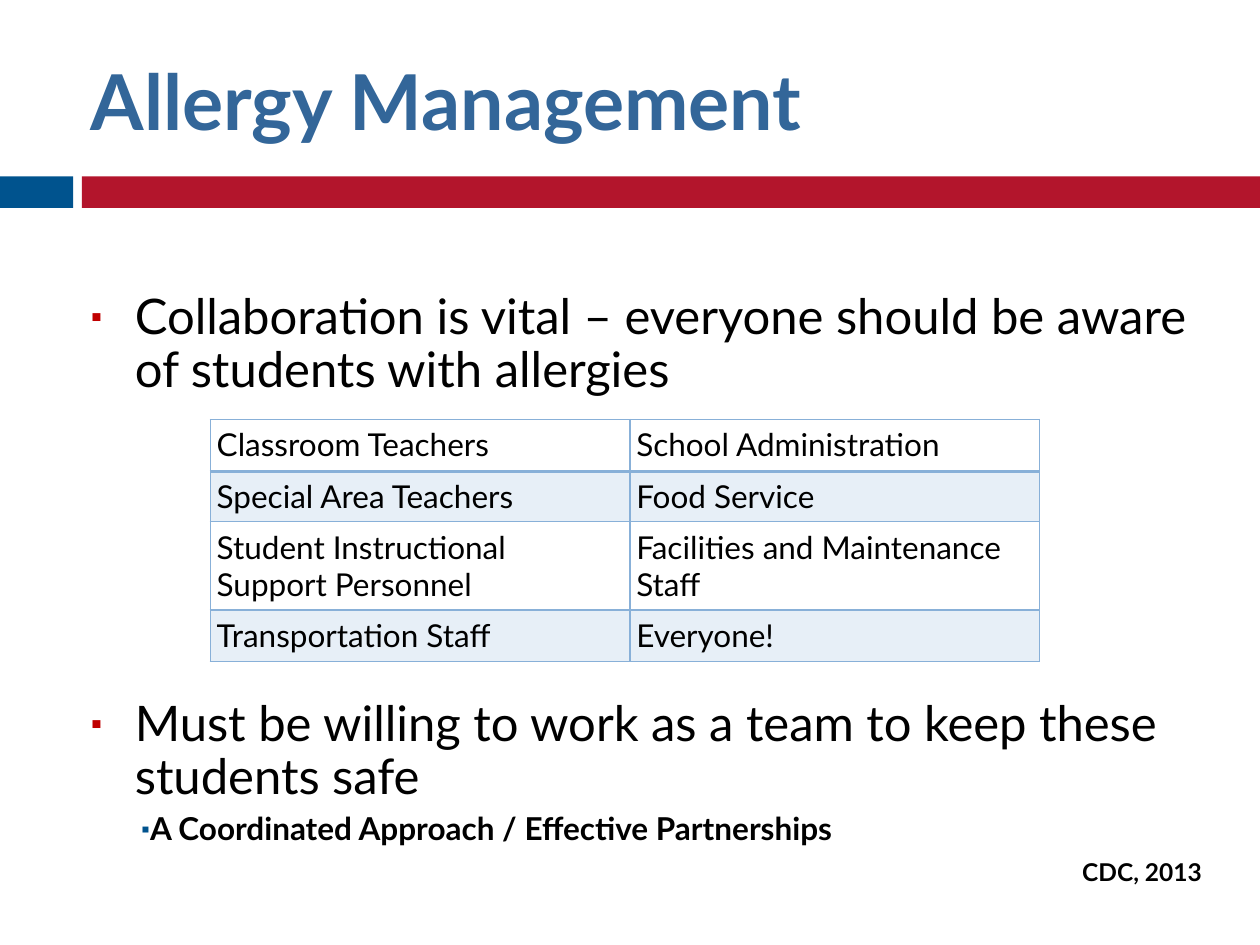
from dataclasses import dataclass

from lxml.etree import SubElement
from pptx import Presentation
from pptx.dml.color import RGBColor
from pptx.enum.shapes import MSO_SHAPE
from pptx.enum.text import MSO_ANCHOR, PP_ALIGN
from pptx.oxml.ns import qn
from pptx.util import Inches, Pt


@dataclass(frozen=True)
class Theme:
    font: str = "Lato"
    title: str = "336699"
    text: str = "000000"
    blue: str = "00538E"
    red: str = "B3152C"
    bullet: str = "C00000"
    grid: str = "88B0D8"
    title_size: int = 44
    body_size: int = 28
    small_size: int = 18
    source_size: int = 14


THEME = Theme()
INSET = Inches(0.05)
STAFF = [
    ["Classroom Teachers", "School Administration"],
    ["Special Area Teachers", "Food Service"],
    ["Student Instructional Support Personnel", "Facilities and Maintenance Staff"],
    ["Transportation Staff", "Everyone!"],
]


def add_span(para, text, size, color=THEME.text, bold=False):
    span = para.add_run()
    span.text = text
    span.font.name = THEME.font
    span.font.size = Pt(size)
    span.font.bold = bold
    span.font.color.rgb = RGBColor.from_string(color)


def add_text_frame(page, box):
    frame = page.shapes.add_textbox(*map(Inches, box)).text_frame
    frame.word_wrap = True
    frame.margin_left = frame.margin_right = INSET
    frame.margin_top = frame.margin_bottom = INSET
    return frame


def set_bullet(para, color, percent, left, indent):
    props = para._p.get_or_add_pPr()
    props.set("marL", str(Inches(left)))
    props.set("indent", str(Inches(indent)))
    SubElement(SubElement(props, qn("a:buClr")), qn("a:srgbClr"), val=color)
    SubElement(props, qn("a:buSzPct"), val=str(percent * 1000))
    SubElement(props, qn("a:buFont"), typeface=THEME.font)
    SubElement(props, qn("a:buChar"), char="▪")


def add_band(page, box):
    """Short blue block, a gap, then a red bar to the right edge."""
    left, top, width, height = box
    block, gap = 0.58, 0.07
    bar_left = left + block + gap
    parts = [(left, block, THEME.blue), (bar_left, left + width - bar_left, THEME.red)]
    for part_left, part_width, color in parts:
        bar = page.shapes.add_shape(
            MSO_SHAPE.RECTANGLE, *map(Inches, (part_left, top, part_width, height)))
        bar.shadow.inherit = False
        bar.fill.solid()
        bar.fill.fore_color.rgb = RGBColor.from_string(color)
        bar.line.fill.background()


def add_title(page, box):
    frame = add_text_frame(page, box)
    frame.vertical_anchor = MSO_ANCHOR.MIDDLE
    add_span(frame.paragraphs[0], "Allergy Management", THEME.title_size, THEME.title, True)


def add_body(page, box):
    """Two main points with room for the table between them, then the closing lines."""
    frame = add_text_frame(page, box)
    frame.margin_top = Inches(0.57)
    first = frame.paragraphs[0]
    second, detail, source = (frame.add_paragraph() for _ in range(3))
    for para, before in ((first, 0), (second, 172), (detail, 5), (source, 7)):
        para.line_spacing = 0.9
        para.space_before = Pt(before)

    for para, text in (
        (first, "Collaboration is vital – everyone should be aware of students with allergies"),
        (second, "Must be willing to work as a team to keep these students safe"),
    ):
        set_bullet(para, THEME.bullet, 60, 0.35, -0.35)
        add_span(para, text, THEME.body_size)

    set_bullet(detail, THEME.blue, 70, 0.4, 0)
    add_span(detail, "A Coordinated Approach / Effective Partnerships", THEME.small_size, bold=True)
    source.alignment = PP_ALIGN.RIGHT
    add_span(source, "CDC, 2013", THEME.source_size, bold=True)


def style_cell(cell, row):
    """Grid lines all round, thicker under the first row, and a tint on every other row."""
    props = cell._tc.get_or_add_tcPr()
    thick = {(0, "B"), (1, "T")}
    for side in "LRTB":
        width = Pt(2 if (row, side) in thick else 1)
        line = SubElement(props, qn(f"a:ln{side}"), w=str(width))
        SubElement(SubElement(line, qn("a:solidFill")), qn("a:srgbClr"), val=THEME.grid)
    if row % 2:
        cell.fill.solid()
        cell.fill.fore_color.rgb = RGBColor.from_string(THEME.grid)
        tint = props.find(qn("a:solidFill")).find(qn("a:srgbClr"))
        SubElement(tint, qn("a:alpha"), val="20000")
    else:
        cell.fill.background()


def add_staff_table(page, box):
    table = page.shapes.add_table(len(STAFF), len(STAFF[0]), *map(Inches, box)).table
    table.first_row = table.horz_banding = False
    for column, width in zip(table.columns, (3.33, 3.25)):
        column.width = Inches(width)
    for line, height in zip(table.rows, (0.41, 0.4, 0.7, 0.41)):
        line.height = Inches(height)
    for row, names in enumerate(STAFF):
        for column, name in enumerate(names):
            cell = table.cell(row, column)
            cell.margin_left = cell.margin_right = INSET
            cell.margin_top = cell.margin_bottom = INSET
            add_span(cell.text_frame.paragraphs[0], name, THEME.small_size)
            style_cell(cell, row)


def main():
    deck = Presentation()
    deck.slide_width, deck.slide_height = Inches(10), Inches(7.5)
    page = deck.slides.add_slide(deck.slide_layouts[6])
    add_band(page, (0, 1.4, 10, 0.25))
    add_title(page, (0.67, 0.25, 8.92, 1.08))
    add_body(page, (0.67, 1.75, 8.92, 5.5))
    add_staff_table(page, (1.67, 3.33, 6.58, 1.92))
    deck.save("out.pptx")


if __name__ == "__main__":
    main()
